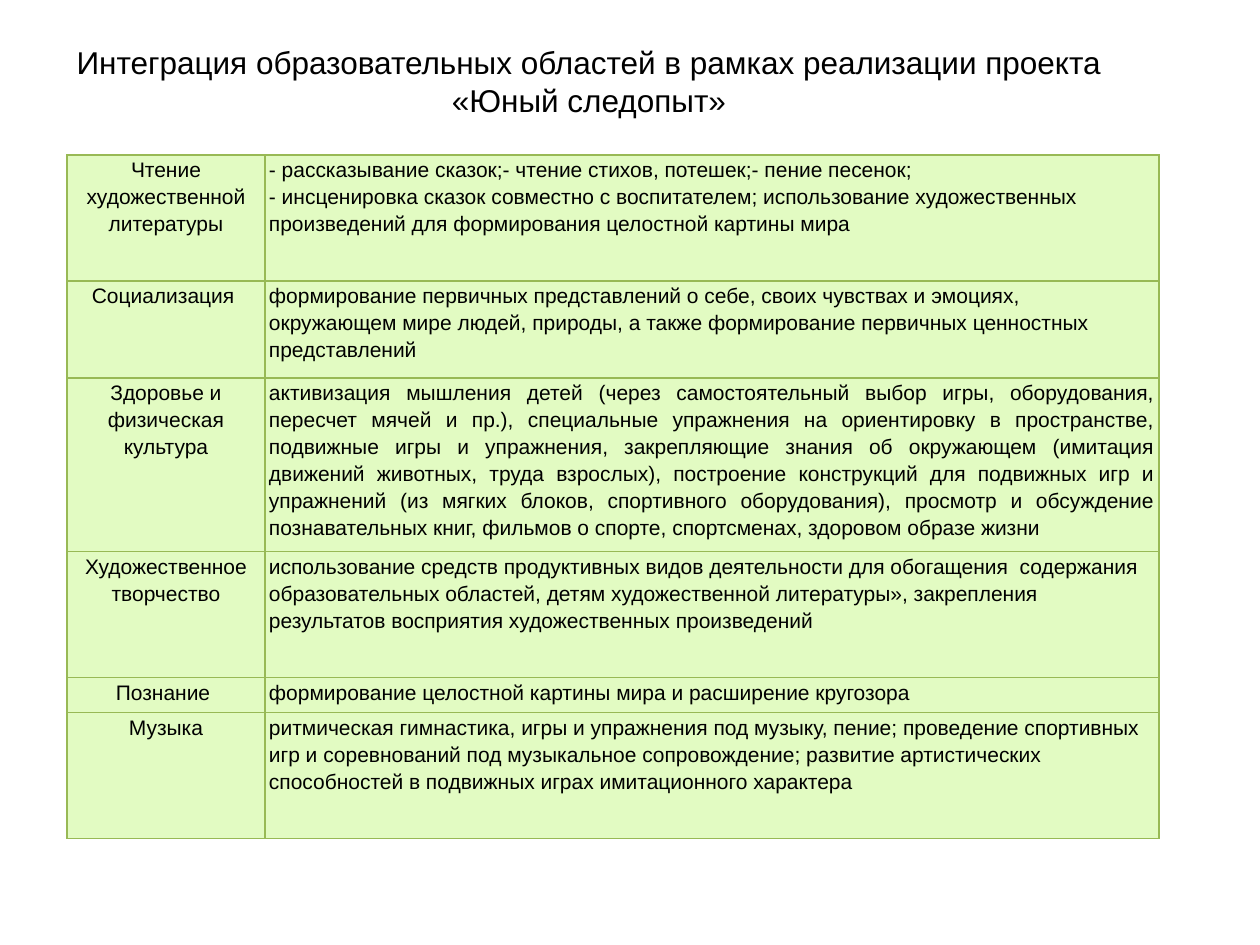
from lxml import etree
from pptx import Presentation
from pptx import util as u
from pptx.dml.color import RGBColor
from pptx.enum import text
from pptx.oxml import ns

PX = 914400 // 126
BLACK = RGBColor(0x00, 0x00, 0x00)
PALE_GREEN = RGBColor(0xE2, 0xFB, 0xC2)
GREEN = RGBColor(0x98, 0xB9, 0x55)

LEFT, CENTER, JUSTIFY = (
    text.PP_ALIGN.LEFT, text.PP_ALIGN.CENTER, text.PP_ALIGN.JUSTIFY)

TITLE = ("Интеграция образовательных областей в рамках реализации проекта "
         "«Юный следопыт»")
COLUMN_WIDTHS = (198, 894)
# Row height, educational area, content, alignment of the content
AREAS = (
    (126, "Чтение художественной литературы",
     "- рассказывание сказок;- чтение стихов, потешек;- пение песенок;\n"
     "- инсценировка сказок совместно с воспитателем; использование "
     "художественных произведений для формирования целостной картины мира",
     LEFT),
    (97, "Социализация ",
     "формирование первичных представлений о себе, своих чувствах и эмоциях,\v"
     "окружающем мире людей, природы, а также формирование первичных "
     "ценностных представлений", LEFT),
    (174, "Здоровье и физическая культура",
     "активизация мышления детей (через самостоятельный выбор игры, "
     "оборудования, пересчет мячей и пр.), специальные упражнения на "
     "ориентировку в пространстве, подвижные игры и упражнения, закрепляющие "
     "знания об окружающем (имитация движений животных, труда взрослых), "
     "построение конструкций для подвижных игр и упражнений (из мягких "
     "блоков, спортивного оборудования), просмотр и обсуждение познавательных "
     "книг, фильмов о спорте, спортсменах, здоровом образе жизни", JUSTIFY),
    (126, "Художественное творчество",
     "использование средств продуктивных видов деятельности для обогащения  "
     "содержания образовательных областей, детям художественной литературы», "
     "закрепления результатов восприятия художественных произведений", LEFT),
    (35, "Познание ",
     "формирование целостной картины мира и расширение кругозора", JUSTIFY),
    (126, "Музыка",
     "ритмическая гимнастика, игры и упражнения под музыку, пение; проведение "
     "спортивных игр и соревнований под музыкальное сопровождение; развитие "
     "артистических способностей в подвижных играх имитационного характера",
     LEFT),
)


def px(length):
    return u.Emu(length * PX)


def set_attributes(target, values):
    for name, value in values.items():
        setattr(target, name, value)


def format_paragraphs(frame, size, alignment, spacing):
    for paragraph in frame.paragraphs:
        set_attributes(paragraph, {
            "alignment": alignment, "line_spacing": spacing,
            "space_before": u.Pt(0), "space_after": u.Pt(0)})
        set_attributes(paragraph.font, {
            "name": "Arial", "size": u.Pt(size), "bold": False})
        paragraph.font.color.rgb = BLACK


def add_borders(cell):
    properties = cell._tc.get_or_add_tcPr()
    for position, side in enumerate(("lnL", "lnR", "lnT", "lnB")):
        line = etree.Element(ns.qn(f"a:{side}"), w=str(u.Pt(0.75)))
        fill = etree.SubElement(line, ns.qn("a:solidFill"))
        etree.SubElement(fill, ns.qn("a:srgbClr"), val=str(GREEN))
        properties.insert(position, line)


def fill_cell(cell, wording, alignment):
    cell.text_frame.text = wording
    format_paragraphs(cell.text_frame, 12, alignment, 1.15)
    set_attributes(cell, {
        "margin_left": px(4), "margin_right": px(4),
        "margin_top": 0, "margin_bottom": 0,
        "vertical_anchor": text.MSO_ANCHOR.TOP})
    cell.fill.solid()
    cell.fill.fore_color.rgb = PALE_GREEN
    add_borders(cell)


def set_title(slide):
    title = slide.shapes.title
    set_attributes(title, {"left": px(15), "top": px(37),
                           "width": px(1148), "height": px(89)})
    frame = title.text_frame
    frame.text = TITLE
    set_attributes(frame, {"word_wrap": True,
                           "auto_size": text.MSO_AUTO_SIZE.NONE,
                           "vertical_anchor": text.MSO_ANCHOR.TOP})
    format_paragraphs(frame, 18, CENTER, 1.0)


def add_areas_table(slide):
    table = slide.shapes.add_table(
        len(AREAS), len(COLUMN_WIDTHS), px(67), px(155),
        px(sum(COLUMN_WIDTHS)), px(sum(area[0] for area in AREAS))).table
    set_attributes(table, {"first_row": False, "horz_banding": False})
    for column, width in zip(table.columns, COLUMN_WIDTHS):
        column.width = px(width)
    for index, (height, area, content, alignment) in enumerate(AREAS):
        table.rows[index].height = px(height)
        fill_cell(table.cell(index, 0), area, CENTER)
        fill_cell(table.cell(index, 1), content, alignment)


def main():
    deck = Presentation()
    set_attributes(deck, {"slide_width": px(1260), "slide_height": px(945)})
    slide = deck.slides.add_slide(deck.slide_layouts.get_by_name("Title Only"))
    set_title(slide)
    add_areas_table(slide)
    deck.save("out.pptx")


if __name__ == "__main__":
    main()
